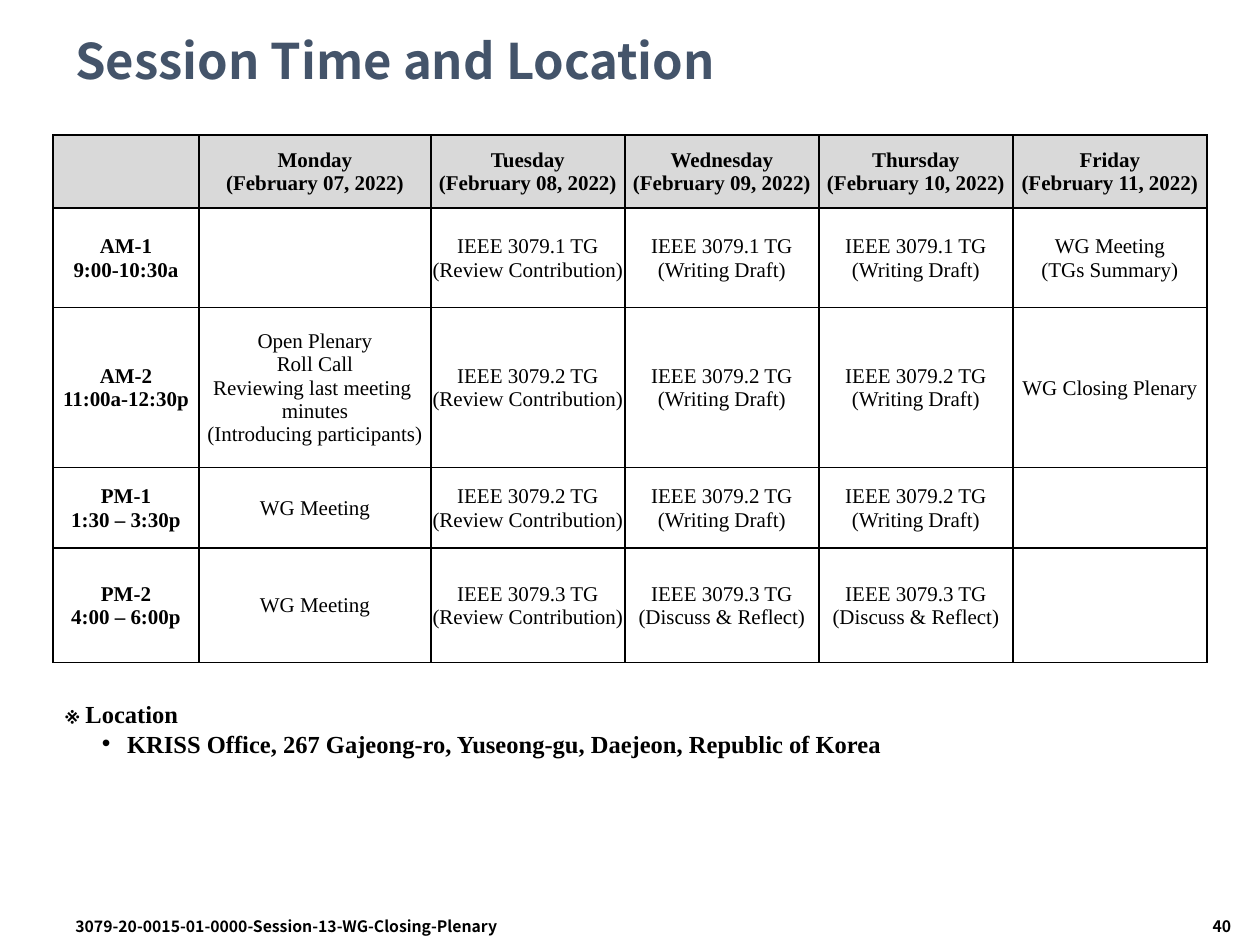
from dataclasses import dataclass

from lxml import etree
from pptx import Presentation
from pptx.dml.color import RGBColor
from pptx.enum import text
from pptx.oxml import ns
from pptx.util import Inches, Pt


@dataclass(frozen=True)
class Theme:
    ink: str = "000000"
    title: str = "44546A"
    head: str = "D9D9D9"
    sans: str = "Noto Sans CJK KR"
    serif: str = "Times New Roman"
    big: int = 28
    note: int = 14
    cell: int = 12
    small: int = 9
    line: int = 1


THEME = Theme()
COLS = [1.16, 1.84] + [1.54] * 4
ROWS = [0.58, 0.79, 1.27, 0.64, 0.91]
DAYS = ["Monday", "Tuesday", "Wednesday", "Thursday", "Friday"]
HEAD = [""] + [f"{day}\n(February {date:02}, 2022)"
               for date, day in enumerate(DAYS, 7)]


def group(num, *tasks):
    return [f"IEEE 3079.{num} TG\n({task})" for task in tasks]


DRAFT = ["Review Contribution", "Writing Draft", "Writing Draft"]
REFLECT = ["Review Contribution", "Discuss & Reflect", "Discuss & Reflect"]
OPEN = ("Open Plenary\nRoll Call\nReviewing last meeting \vminutes\n"
        "(Introducing participants)")
GRID = [
    HEAD,
    ["AM-1\n9:00-10:30a", "", *group(1, *DRAFT), "WG Meeting\n(TGs Summary)"],
    ["AM-2\n11:00a-12:30p", OPEN, *group(2, *DRAFT), "WG Closing Plenary"],
    ["PM-1\n1:30 – 3:30p", "WG Meeting", *group(2, *DRAFT), ""],
    ["PM-2\n4:00 – 6:00p", "WG Meeting", *group(3, *REFLECT), ""],
]


def style(font, face, size, bold=True, color=THEME.ink):
    font.name = face
    font.size = Pt(size)
    font.bold = bold
    font.color.rgb = RGBColor.from_string(color)


def add_text(slide, box, words, face, size, color=THEME.ink, align=None):
    frame = slide.shapes.add_textbox(*map(Inches, box)).text_frame
    frame.word_wrap = True
    frame.text = words
    for para in frame.paragraphs:
        para.alignment = align
        for run in para.runs:
            style(run.font, face, size, color=color)
    return frame


def add_title(slide, box):
    frame = add_text(slide, box, "Session Time and Location",
                     THEME.sans, THEME.big, THEME.title)
    frame.vertical_anchor = text.MSO_ANCHOR.MIDDLE
    frame.paragraphs[0].line_spacing = 0.9


def add_edges(cell):
    """Draw the four borders, which must precede the cell's fill."""
    props = cell._tc.get_or_add_tcPr()
    for side in ("lnL", "lnR", "lnT", "lnB"):
        line = etree.SubElement(props, ns.qn(f"a:{side}"), w=str(Pt(THEME.line)))
        fill = etree.SubElement(line, ns.qn("a:solidFill"))
        etree.SubElement(fill, ns.qn("a:srgbClr"), val=THEME.ink)


def fill_cell(cell, words, bold, head):
    cell.margin_left = cell.margin_right = cell.margin_top = Inches(0.01)
    cell.margin_bottom = 0
    cell.vertical_anchor = text.MSO_ANCHOR.MIDDLE
    add_edges(cell)
    if head:
        cell.fill.solid()
        cell.fill.fore_color.rgb = RGBColor.from_string(THEME.head)
    else:
        cell.fill.background()
    cell.text_frame.text = words
    for para in cell.text_frame.paragraphs:
        para.alignment = text.PP_ALIGN.CENTER
        style(para.font, THEME.serif, THEME.cell, bold)
        for run in para.runs:
            style(run.font, THEME.serif, THEME.cell, bold)


def add_plan(slide, box):
    frame = slide.shapes.add_table(len(ROWS), len(COLS), *map(Inches, box))
    table = frame.table
    for col, width in zip(table.columns, COLS):
        col.width = Inches(width)
    for row, height in zip(table.rows, ROWS):
        row.height = Inches(height)
    for i, line in enumerate(GRID):
        for j, words in enumerate(line):
            fill_cell(table.cell(i, j), words, i == 0 or j == 0, i == 0)


def add_place(slide, box):
    words = ("※ Location\n"
             "KRISS Office, 267 Gajeong-ro, Yuseong-gu, Daejeon, Republic of Korea")
    frame = add_text(slide, box, words, THEME.serif, THEME.note)
    props = frame.paragraphs[1]._p.get_or_add_pPr()
    props.set("marL", str(Inches(0.49)))
    props.set("indent", str(Inches(-0.2)))
    etree.SubElement(props, ns.qn("a:buFont"), typeface="Arial")
    etree.SubElement(props, ns.qn("a:buChar"), char="•")


def add_foot(slide, top, height):
    add_text(slide, (0.5, top, 4.42, height),
             "3079-20-0015-01-0000-Session-13-WG-Closing-Plenary",
             THEME.sans, THEME.small)
    add_text(slide, (8.25, top, 1.62, height), "40",
             THEME.sans, THEME.small, align=text.PP_ALIGN.RIGHT)


def main():
    deck = Presentation()
    deck.slide_width, deck.slide_height = Inches(10), Inches(7.5)
    slide = deck.slides.add_slide(deck.slide_layouts[6])
    add_title(slide, (0.5, 0.17, 9, 0.67))
    add_plan(slide, (0.42, 1.07, sum(COLS), sum(ROWS)))
    add_place(slide, (0.42, 5.5, 9.17, 0.57))
    add_foot(slide, 7.23, 0.27)
    deck.save("out.pptx")


if __name__ == "__main__":
    main()
